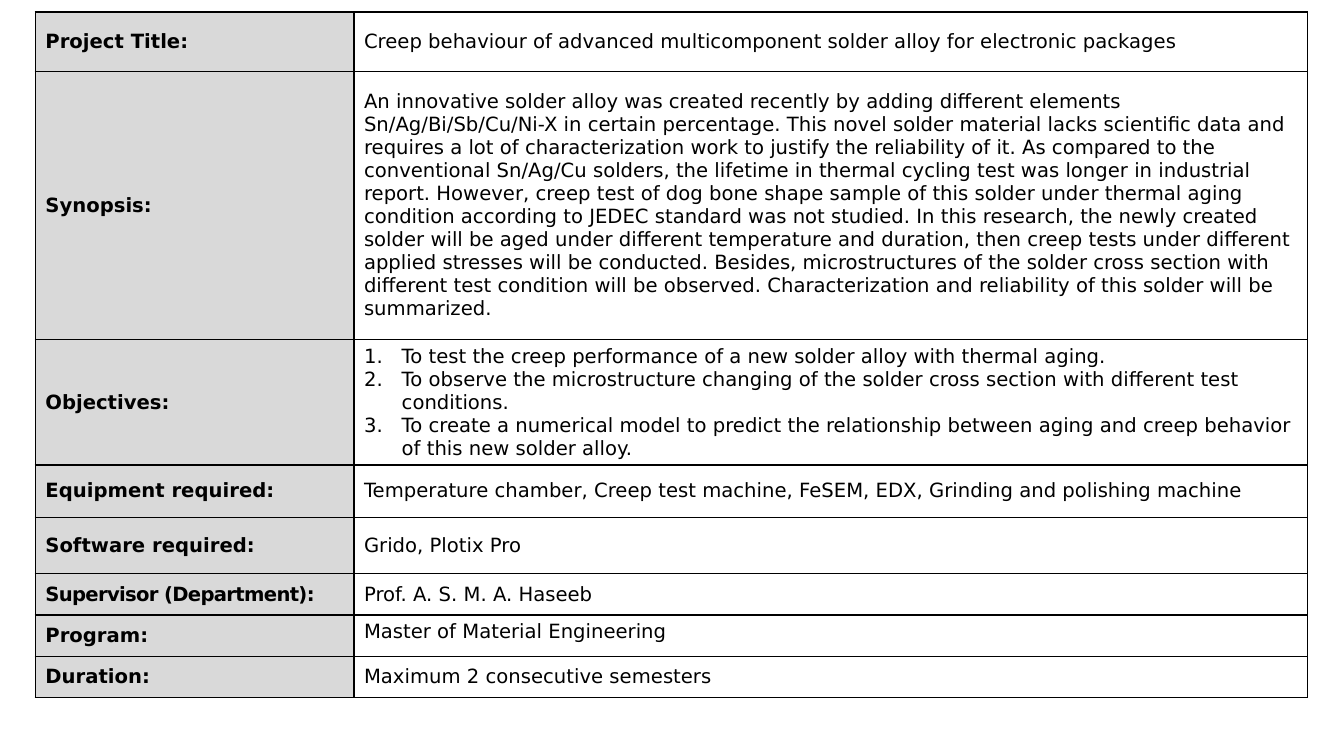
from pptx import Presentation
from pptx.dml.color import RGBColor
from pptx.enum.text import MSO_ANCHOR
from pptx.oxml.ns import qn
from pptx.util import Cm, Pt
from lxml.etree import SubElement

COLORS = {"text": "000000", "border": "000000", "label": "D9D9D9"}
FONT = "DejaVu Sans"
COLUMN_WIDTHS = (8.03, 24.03)
SYNOPSIS = " ".join((
    "An innovative solder alloy was created recently by adding different elements "
    "Sn/Ag/Bi/Sb/Cu/Ni-X in certain percentage.",
    "This novel solder material lacks scientific data and requires a lot of "
    "characterization work to justify the reliability of it.",
    "As compared to the conventional Sn/Ag/Cu solders, the lifetime in thermal cycling "
    "test was longer in industrial report.",
    "However, creep test of dog bone shape sample of this solder under thermal aging "
    "condition according to JEDEC standard was not studied.",
    "In this research, the newly created solder will be aged under different temperature "
    "and duration, then creep tests under different applied stresses will be conducted.",
    "Besides, microstructures of the solder cross section with different test condition "
    "will be observed.",
    "Characterization and reliability of this solder will be summarized.",
))
OBJECTIVES = "\n".join((
    "To test the creep performance of a new solder alloy with thermal aging.",
    "To observe the microstructure changing of the solder cross section with different "
    "test conditions.",
    "To create a numerical model to predict the relationship between aging and creep "
    "behavior of this new solder alloy.",
))
ROWS = (
    (1.5, "Project Title:", "Creep behaviour of advanced multicomponent solder alloy "
                            "for electronic packages"),
    (6.76, "Synopsis:", SYNOPSIS),
    (2.9, "Objectives:", OBJECTIVES),
    (1.32, "Equipment required:", "Temperature chamber, Creep test machine, FeSEM, EDX, "
                                  "Grinding and polishing machine"),
    (1.42, "Software required:", "Grido, Plotix Pro"),
    (1.04, "Supervisor (Department):", "Prof. A. S. M. A. Haseeb"),
    (1.04, "Program:", "Master of Material Engineering"),
    (1.04, "Duration:", "Maximum 2 consecutive semesters"),
)


def color(name):
    return RGBColor.from_string(COLORS[name])


def add_borders(cell):
    properties = cell._tc.get_or_add_tcPr()
    for side in ("a:lnL", "a:lnR", "a:lnT", "a:lnB"):
        line = SubElement(properties, qn(side), w=str(Pt(1)))
        fill = SubElement(line, qn("a:solidFill"))
        SubElement(fill, qn("a:srgbClr"), val=COLORS["border"])


def write_cell(cell, text, bold=False):
    cell.text_frame.text = text
    cell.vertical_anchor = MSO_ANCHOR.MIDDLE
    add_borders(cell)
    cell.fill.background()
    for paragraph in cell.text_frame.paragraphs:
        for run in paragraph.runs:
            run.font.name = FONT
            run.font.size = Pt(14)
            run.font.bold = bold
            run.font.color.rgb = color("text")


def write_label(cell, text):
    write_cell(cell, text, bold=True)
    cell.fill.solid()
    cell.fill.fore_color.rgb = color("label")


def number_paragraphs(cell):
    indent = Cm(0.95)
    for paragraph in cell.text_frame.paragraphs:
        properties = paragraph._p.get_or_add_pPr()
        properties.set("marL", str(indent))
        properties.set("indent", str(-indent))
        SubElement(properties, qn("a:buFont"), typeface="+mj-lt")
        SubElement(properties, qn("a:buAutoNum"), type="arabicPeriod")


def tighten_label(cell):
    cell.margin_right = 0
    run = cell.text_frame.paragraphs[0].runs[0]
    run._r.get_or_add_rPr().set("spc", "-50")


def add_project_table(slide):
    height = sum(row[0] for row in ROWS)
    frame = slide.shapes.add_table(
        len(ROWS), 2, Cm(0.89), Cm(0.3), Cm(sum(COLUMN_WIDTHS)), Cm(height))
    table = frame.table
    table.first_row = False
    table.horz_banding = False
    for column, width in zip(table.columns, COLUMN_WIDTHS):
        column.width = Cm(width)
    for index, (row_height, label, content) in enumerate(ROWS):
        table.rows[index].height = Cm(row_height)
        label_cell, content_cell = table.cell(index, 0), table.cell(index, 1)
        write_label(label_cell, label)
        write_cell(content_cell, content)
        if label == "Objectives:":
            number_paragraphs(content_cell)
        elif label == "Supervisor (Department):":
            tighten_label(label_cell)
        elif label == "Program:":
            content_cell.vertical_anchor = MSO_ANCHOR.TOP


def main():
    presentation = Presentation()
    presentation.slide_width = Cm(33.87)
    presentation.slide_height = Cm(19.05)
    slide = presentation.slides.add_slide(presentation.slide_layouts[6])
    add_project_table(slide)
    presentation.save("out.pptx")


if __name__ == "__main__":
    main()
